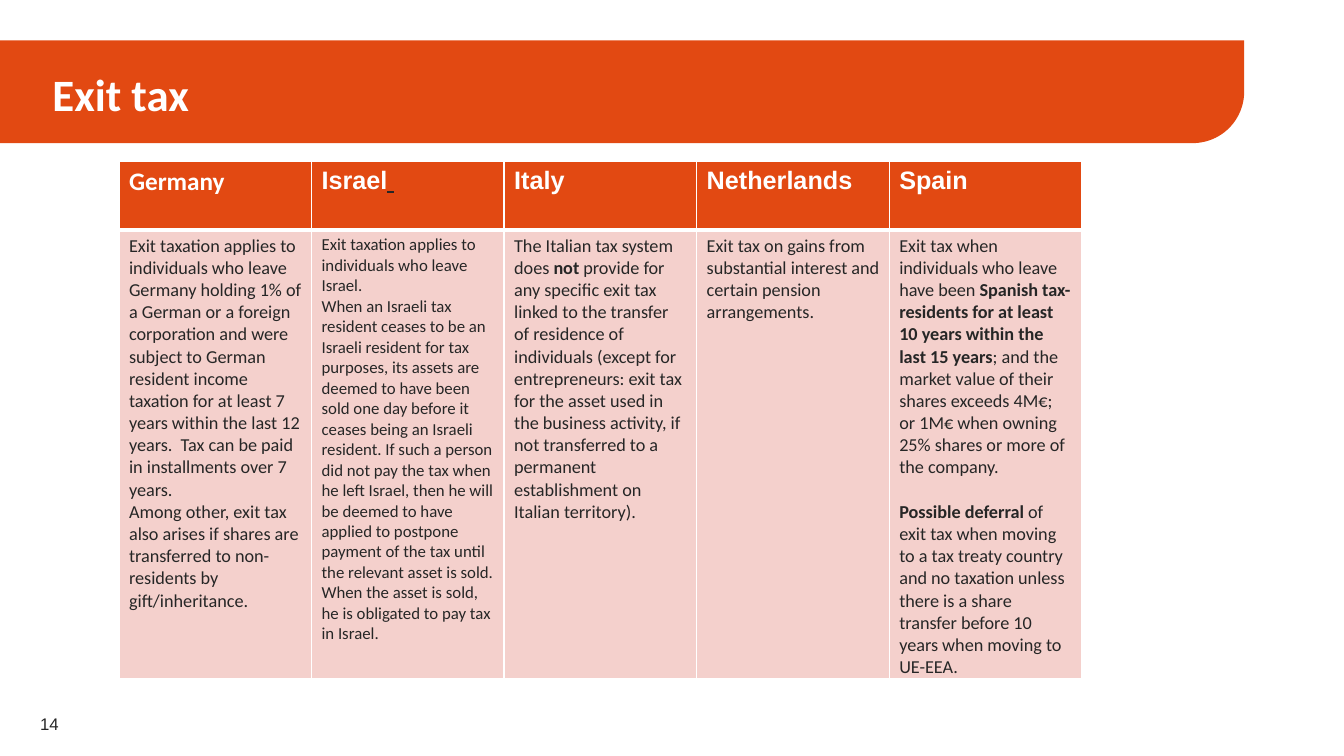
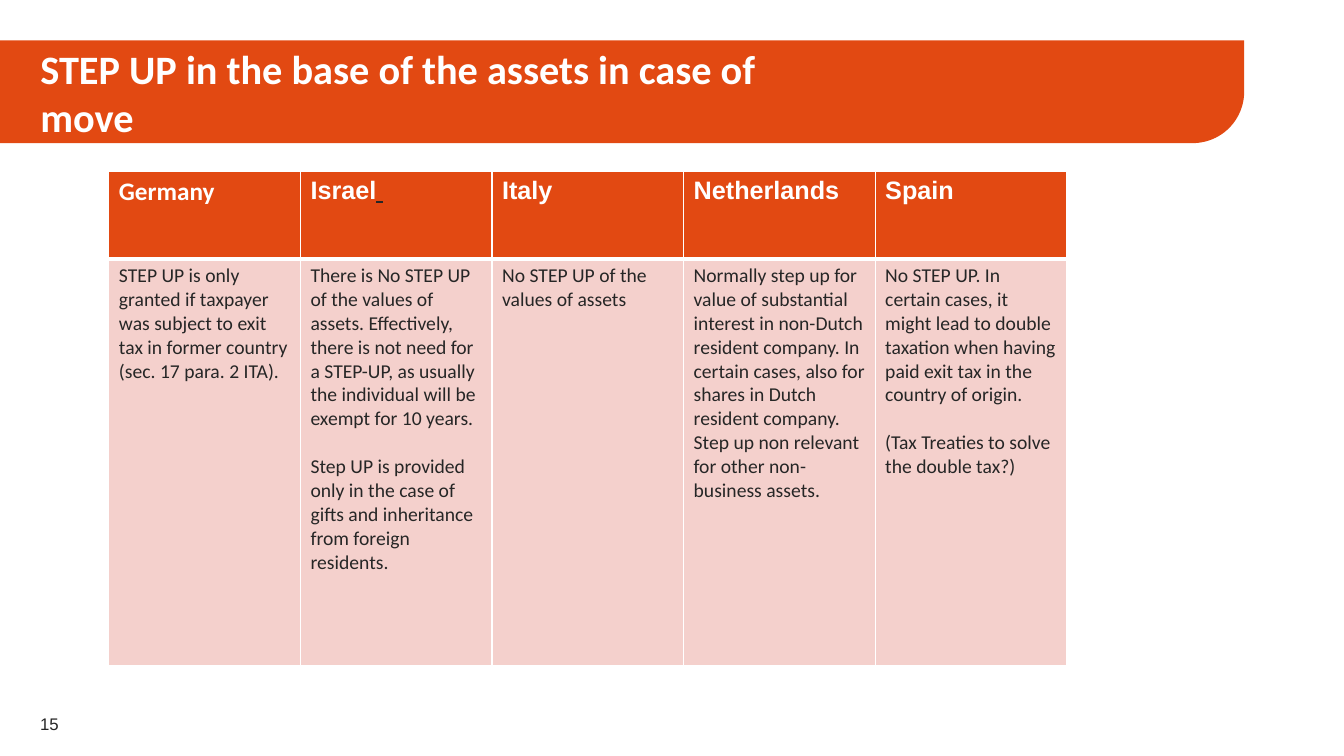
from lxml import etree
from pptx import Presentation
from pptx.dml.color import RGBColor
from pptx.enum import shapes, text
from pptx.oxml import ns
from pptx.util import Inches, Pt

HUES = {"brand": "E24912", "pale": "F4D0CC", "ink": "262626", "white": "FFFFFF"}
LANDS = ["Germany", "Israel", "Italy", "Netherlands", "Spain"]
GAP = "+"
BOLD = "**"

EXIT = [
    ["Exit taxation applies to individuals who leave Germany holding 1% of a German or a foreign "
     "corporation and were subject to German resident income taxation for at least 7 years within "
     "the last 12 years.  Tax can be paid in installments over 7 years.",
     "Among other, exit tax also arises if shares are transferred to non-residents by "
     "gift/inheritance."],
    ["Exit taxation applies to individuals who leave Israel.",
     "When an Israeli tax resident ceases to be an Israeli resident for tax purposes, its assets "
     "are deemed to have been sold one day before it ceases being an Israeli resident. If such a "
     "person did not pay the tax when he left Israel, then he will be deemed to have applied to "
     "postpone payment of the tax until the relevant asset is sold. When the asset is sold, he is "
     "obligated to pay tax in Israel."],
    ["The Italian tax system does **not** provide for any specific exit tax linked to the transfer "
     "of residence of individuals (except for entrepreneurs: exit tax for the asset used in the "
     "business activity, if not transferred to a permanent establishment on Italian territory)."],
    ["Exit tax on gains from substantial interest and certain pension arrangements."],
    ["Exit tax when individuals who leave have been **Spanish tax-residents for at least 10 years "
     "within the last 15 years**; and the market value of their shares exceeds 4M€; or 1M€ when "
     "owning 25% shares or more of the company.",
     "+**Possible deferral **of exit tax when moving to a tax treaty country and no taxation "
     "unless there is a share transfer before 10 years when moving to UE-EEA."],
]

STEP = [
    ["STEP UP is only granted if taxpayer was subject to exit tax in former country "
     "(sec. 17 para. 2 ITA)."],
    ["There is No STEP UP of the values of assets. Effectively, there is not need for a STEP-UP, "
     "as usually the individual will be exempt for 10 years.",
     "+Step UP is provided only in the case of gifts and inheritance from foreign residents."],
    ["No STEP UP of the values of assets"],
    ["Normally step up for value of substantial interest in non-Dutch resident company. In certain "
     "cases, also for shares in Dutch resident company. Step up non relevant for other "
     "non-business assets."],
    ["No STEP UP. In certain cases, it might lead to double taxation when having paid exit tax in "
     "the country of origin.",
     "+(Tax Treaties to solve the double tax?)"],
]


def hue(name):
    return RGBColor.from_string(HUES[name])


def style(font, size, face, tint, bold=False):
    font.size, font.name, font.bold = Pt(size), face, bold
    font.color.rgb = hue(tint)


def paint(item, name):
    item.fill.solid()
    item.fill.fore_color.rgb = hue(name)


def edge(cell, **widths):
    props = cell._tc.get_or_add_tcPr()
    for side in "LRTB":
        line = etree.SubElement(props, ns.qn("a:ln" + side), w=str(Pt(widths.get(side, 1))))
        solid = etree.SubElement(line, ns.qn("a:solidFill"))
        etree.SubElement(solid, ns.qn("a:srgbClr"), val=HUES["white"])


def add_band(slide):
    band = slide.shapes.add_shape(shapes.MSO_SHAPE.ROUND_1_RECTANGLE,
                                  0, Inches(0.4), Inches(12.34), Inches(1.02))
    band.adjustments[0] = 0.5
    band.element.spPr.xfrm.set("flipV", "1")
    band.shadow.inherit = False
    band.line.fill.background()
    paint(band, "brand")
    slide.shapes.title.element.addprevious(band.element)


def set_title(slide, words, box, size):
    title = slide.shapes.title
    title.left, title.top, title.width, title.height = map(Inches, box)
    frame = title.text_frame
    frame.text = words
    frame.word_wrap = True
    frame.auto_size = text.MSO_AUTO_SIZE.NONE
    frame.vertical_anchor = text.MSO_ANCHOR.MIDDLE
    para = frame.paragraphs[0]
    para.alignment = text.PP_ALIGN.LEFT
    style(para.font, size, "Calibri", "white", True)


def add_number(slide, number):
    box = slide.shapes.add_textbox(Inches(0.3), Inches(6.98), Inches(0.63), Inches(0.4))
    frame = box.text_frame
    frame.word_wrap = True
    frame.vertical_anchor = text.MSO_ANCHOR.MIDDLE
    frame.text = str(number)
    style(frame.paragraphs[0].font, 12, "Arial", "ink")


def fill_head(cell, land):
    edge(cell, B=3)
    paint(cell, "brand")
    cell.text = land
    para = cell.text_frame.paragraphs[0]
    style(para.font, 18, "Calibri" if land == "Germany" else "Arial", "white", True)
    if land == "Israel":
        tail = para.add_run()
        tail.text = " "
        tail.font.underline = True
        tail.font.color.rgb = hue("ink")


def fill_body(cell, lines, size):
    edge(cell, T=3)
    paint(cell, "pale")
    frame = cell.text_frame
    for row, line in enumerate(lines):
        para = frame.add_paragraph() if row else frame.paragraphs[0]
        style(para.font, size, "Calibri", "ink")
        if line.startswith(GAP):
            para.space_before = Pt(round(size * 1.22, 1))
        for turn, part in enumerate(line.removeprefix(GAP).split(BOLD)):
            if part:
                run = para.add_run()
                run.text = part
                if turn % 2:
                    run.font.bold = True


def add_grid(slide, left, top, width, rows, cells, sizes):
    frame = slide.shapes.add_table(2, len(LANDS), Inches(left), Inches(top),
                                   Inches(width * len(LANDS)), Inches(sum(rows)))
    grid = frame.table
    for row, height in zip(grid.rows, rows):
        row.height = Inches(height)
    for col, (land, lines, size) in enumerate(zip(LANDS, cells, sizes)):
        grid.columns[col].width = Inches(width)
        fill_head(grid.cell(0, col), land)
        fill_body(grid.cell(1, col), lines, size)


def add_page(deck, number, title, box, size):
    slide = deck.slides.add_slide(deck.slide_layouts.get_by_name("Title Only"))
    add_band(slide)
    set_title(slide, title, box, size)
    add_number(slide, number)
    return slide


def main():
    deck = Presentation()
    deck.slide_width, deck.slide_height = Inches(13.33), Inches(7.5)
    slide = add_page(deck, 14, "Exit tax", (0.42, 0.48, 8.78, 0.9), 32)
    add_grid(slide, 1.18, 1.6, 1.91, (0.68, 4.45), EXIT, (13, 12, 13, 13, 13))
    slide = add_page(deck, 15, "STEP UP in the base of the assets in case of move",
                     (0.3, 0.8, 8.31, 0.23), 28.8)
    add_grid(slide, 1.08, 1.7, 1.9, (0.87, 4.03), STEP, (14,) * 5)
    deck.save("out.pptx")


if __name__ == "__main__":
    main()
